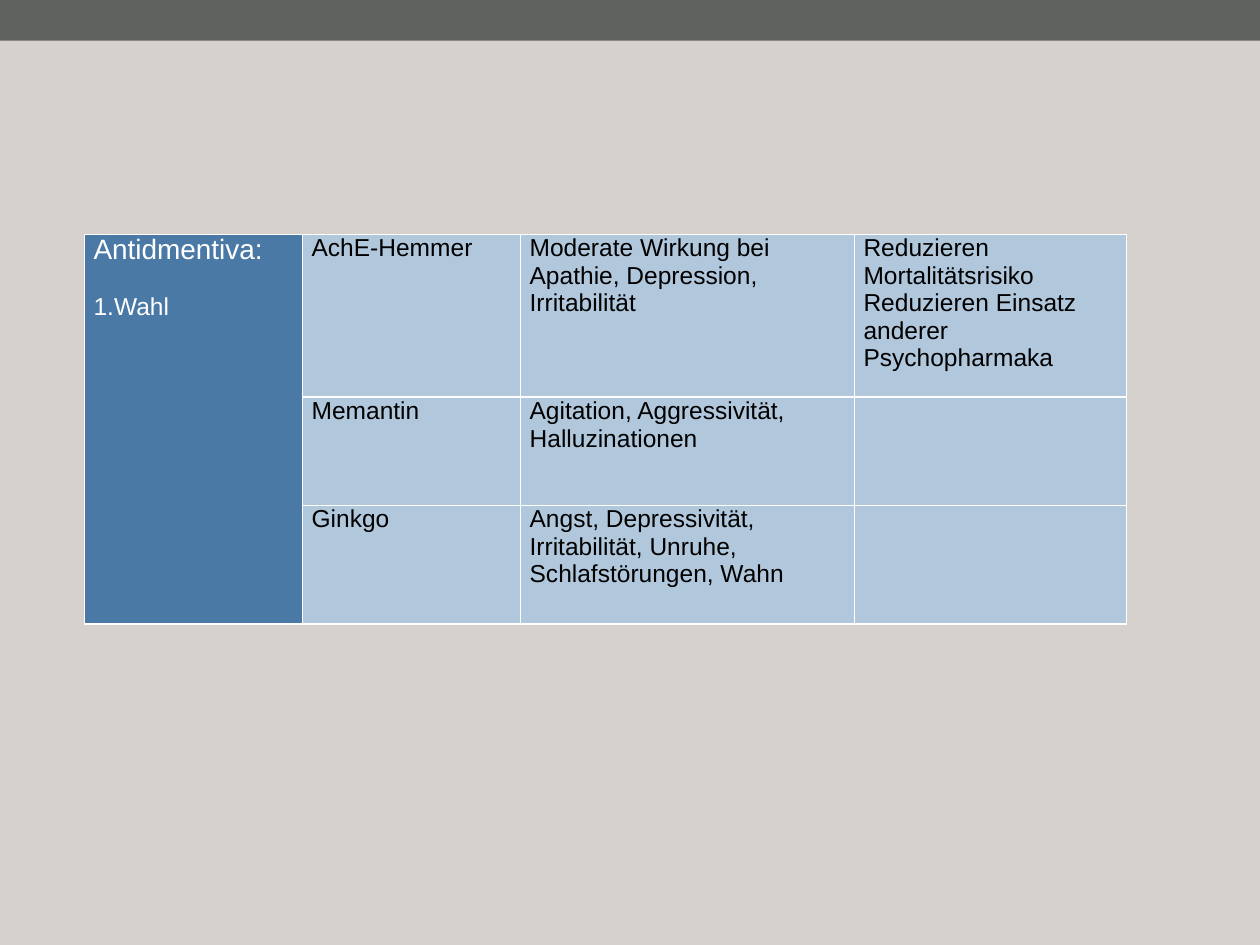
from lxml import etree
from pptx import Presentation
from pptx.dml.color import RGBColor
from pptx.enum.shapes import MSO_SHAPE
from pptx.oxml.ns import qn
from pptx.util import Pt

RECTANGLE = MSO_SHAPE.RECTANGLE
BACKGROUND = RGBColor(0xD6, 0xD1, 0xCD)
BAND = RGBColor(0x5F, 0x62, 0x5F)
HEADING_FILL = RGBColor(0x4B, 0x79, 0xA6)
BODY_FILL = RGBColor(0xB1, 0xC7, 0xDC)
WHITE = RGBColor(0xFF, 0xFF, 0xFF)
BLACK = RGBColor(0x00, 0x00, 0x00)

COLUMN_WIDTHS = (124.6, 124.6, 190.8, 155.5)
ROW_HEIGHTS = (93, 61.9, 67.7)
TREATMENTS = (
    ("AchE-Hemmer",
     "Moderate Wirkung bei\nApathie, Depression, Irritabilität",
     "Reduzieren Mortalitätsrisiko\nReduzieren Einsatz anderer Psychopharmaka"),
    ("Memantin", "Agitation, Aggressivität, Halluzinationen", ""),
    ("Ginkgo", "Angst, Depressivität, Irritabilität, Unruhe, Schlafstörungen, Wahn", ""),
)


def add_band(slide, width, height):
    """Draw the dark band along the top edge."""
    band = slide.shapes.add_shape(RECTANGLE, 0, 0, width, height)
    band.shadow.inherit = False
    band.fill.solid()
    band.fill.fore_color.rgb = BAND
    band.line.fill.background()


def add_borders(cell, color=WHITE, width=Pt(1)):
    """Give a cell the same solid line on all four sides."""
    properties = cell._tc.get_or_add_tcPr()
    for side in ("a:lnL", "a:lnR", "a:lnT", "a:lnB"):
        line = etree.SubElement(properties, qn(side), w=str(width))
        fill = etree.SubElement(line, qn("a:solidFill"))
        etree.SubElement(fill, qn("a:srgbClr"), val=str(color))


def style_cell(cell, fill):
    """Set the margins, borders and fill of a cell."""
    cell.margin_left = cell.margin_right = Pt(5.2)
    cell.margin_top = cell.margin_bottom = 0
    add_borders(cell)
    cell.fill.solid()
    cell.fill.fore_color.rgb = fill


def write_text(cell, text, sizes=(14,), color=BLACK, gap=0):
    """Write one paragraph per line, the last size serving all further lines."""
    cell.text = text
    for index, paragraph in enumerate(cell.text_frame.paragraphs):
        if index and gap:
            paragraph.space_before = Pt(gap)
        paragraph.font.name = "Arial"
        paragraph.font.size = Pt(sizes[min(index, len(sizes) - 1)])
        paragraph.font.bold = False
        paragraph.font.color.rgb = color


def add_treatment_table(slide):
    """Build the table of antidementia drugs and their effects."""
    table = slide.shapes.add_table(
        len(ROW_HEIGHTS), len(COLUMN_WIDTHS), Pt(48.3), Pt(134),
        Pt(sum(COLUMN_WIDTHS)), Pt(sum(ROW_HEIGHTS))).table
    for column, width in zip(table.columns, COLUMN_WIDTHS):
        column.width = Pt(width)
    for row, height, effects in zip(table.rows, ROW_HEIGHTS, TREATMENTS):
        row.height = Pt(height)
        heading, *body = row.cells
        style_cell(heading, HEADING_FILL)
        for cell, text in zip(body, effects):
            style_cell(cell, BODY_FILL)
            write_text(cell, text)
    group = table.cell(0, 0)
    group.merge(table.cell(len(ROW_HEIGHTS) - 1, 0))
    write_text(group, "Antidmentiva:\n1.Wahl", sizes=(16, 14), color=WHITE, gap=16)


def main():
    """Create the slide and save it."""
    presentation = Presentation()
    presentation.slide_width = Pt(720)
    presentation.slide_height = Pt(540)
    slide = presentation.slides.add_slide(presentation.slide_layouts[6])
    slide.background.fill.solid()
    slide.background.fill.fore_color.rgb = BACKGROUND
    add_band(slide, presentation.slide_width, Pt(23.3))
    add_treatment_table(slide)
    presentation.save("out.pptx")


if __name__ == "__main__":
    main()
